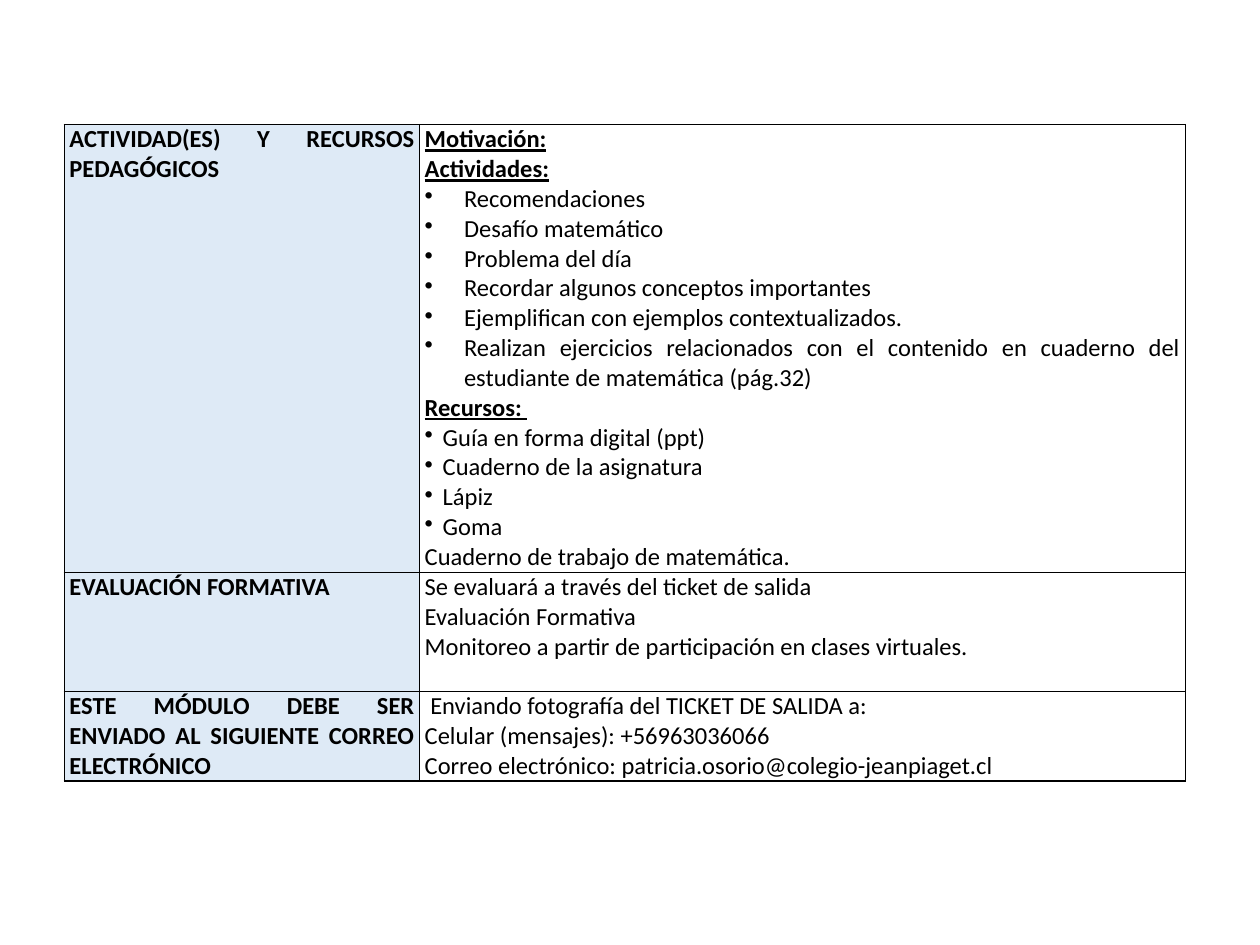
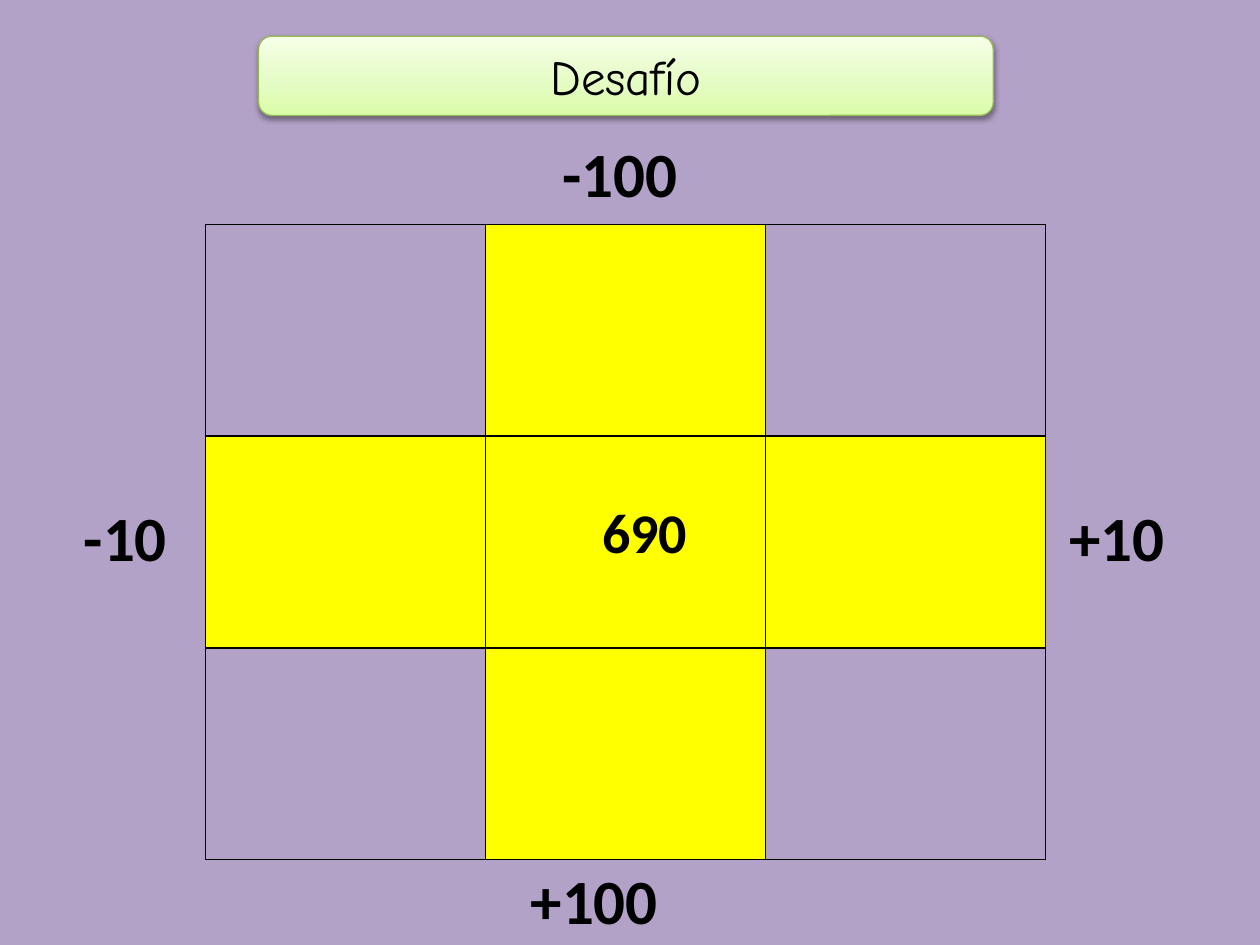
from lxml.etree import SubElement
from pptx import Presentation
from pptx.dml.color import RGBColor
from pptx.enum.shapes import MSO_SHAPE as Shape
from pptx.enum.text import MSO_ANCHOR as Anchor, MSO_AUTO_SIZE as AutoSize, PP_ALIGN as Align
from pptx.oxml import parse_xml
from pptx.oxml.ns import nsdecls, qn
from pptx.util import Pt

BLACK = RGBColor(0x00, 0x00, 0x00)
WHITE = RGBColor(0xFF, 0xFF, 0xFF)
LABEL_BLUE = RGBColor(0xDE, 0xEA, 0xF6)
LILAC = RGBColor(0xB3, 0xA2, 0xC7)
YELLOW = RGBColor(0xFF, 0xFF, 0x00)
BANNER_EDGE = RGBColor(0x98, 0xB9, 0x55)
BANNER_STOPS = [
    (0, RGBColor(0xDA, 0xFD, 0xA7)),
    (35, RGBColor(0xE4, 0xFC, 0xC2)),
    (100, RGBColor(0xF5, 0xFF, 0xE7)),
]
BODY_FONT = "Calibri"
TITLE_FONT = "Comic Neue"

PLAIN, HEADING, BULLET, SHORT_BULLET, INDENTED = range(5)
INDENTS = {BULLET: (22.5, -22.5), SHORT_BULLET: (10.3, -10.3), INDENTED: (3.2, 0)}

ACTIVITIES = [
    (HEADING, "Motivación:"),
    (HEADING, "Actividades:"),
    (BULLET, "Recomendaciones"),
    (BULLET, "Desafío matemático"),
    (BULLET, "Problema del día"),
    (BULLET, "Recordar algunos conceptos importantes"),
    (BULLET, "Ejemplifican con ejemplos contextualizados."),
    (BULLET, "Realizan ejercicios relacionados con el contenido en cuaderno "
             "del estudiante de matemática (pág.32)"),
    (HEADING, "Recursos: "),
    (SHORT_BULLET, "Guía en forma digital (ppt)"),
    (SHORT_BULLET, "Cuaderno de la asignatura"),
    (SHORT_BULLET, "Lápiz"),
    (SHORT_BULLET, "Goma"),
    (PLAIN, "Cuaderno de trabajo de matemática."),
]
EVALUATION = [
    (PLAIN, "Se evaluará a través del ticket de salida"),
    (PLAIN, "Evaluación Formativa"),
    (PLAIN, "Monitoreo a partir de participación en clases virtuales."),
]
DELIVERY = [
    (INDENTED, "Enviando fotografía del TICKET DE SALIDA a:"),
    (PLAIN, "Celular (mensajes): +56963036066"),
    (PLAIN, "Correo electrónico: patricia.osorio@colegio-jeanpiaget.cl"),
]
PLAN = [
    (256, "ACTIVIDAD(ES) Y RECURSOS PEDAGÓGICOS", ACTIVITIES),
    (68, "EVALUACIÓN FORMATIVA", EVALUATION),
    (51, "ESTE MÓDULO DEBE SER ENVIADO AL SIGUIENTE CORREO ELECTRÓNICO", DELIVERY),
]
STEPS = [
    ("+10", 604, 281.5, 91, 36, 0),
    ("-10", 0, 281.5, 111, 36, 40.7),
    ("+100", 288, 489, 127, 36, 8.1),
    ("-100", 306, 73.4, 91, 36, 8.1),
    ("690", 337, 280.8, 117, 32, 0),
]


def set_background(slide, color):
    slide.background.fill.solid()
    slide.background.fill.fore_color.rgb = color


def set_font(paragraph, size, bold=False, underline=False, name=BODY_FONT):
    font = paragraph.font
    font.name, font.size, font.bold, font.underline = name, Pt(size), bold, underline
    font.color.rgb = BLACK


def style_cell(cell, fill_color=None):
    properties = cell._tc.get_or_add_tcPr()
    for side in ("lnL", "lnR", "lnT", "lnB"):
        properties.append(parse_xml(
            f'<a:{side} {nsdecls("a")} w="12700"><a:solidFill>'
            f'<a:srgbClr val="{BLACK}"/></a:solidFill></a:{side}>'))
    if fill_color is None:
        cell.fill.background()
    else:
        cell.fill.solid()
        cell.fill.fore_color.rgb = fill_color


def write_cell(cell, lines, bold=False):
    cell.margin_left = cell.margin_right = Pt(2.9)
    cell.margin_top = cell.margin_bottom = 0
    frame = cell.text_frame
    for position, (kind, text) in enumerate(lines):
        paragraph = frame.add_paragraph() if position else frame.paragraphs[0]
        paragraph.text = text
        paragraph.alignment = Align.JUSTIFY
        if kind in INDENTS:
            margin, hanging = INDENTS[kind]
            properties = paragraph._p.get_or_add_pPr()
            properties.set("marL", str(Pt(margin)))
            properties.set("indent", str(Pt(hanging)))
            if hanging:
                SubElement(properties, qn("a:buChar")).set("char", "•")
        set_font(paragraph, 14, bold or kind == HEADING, kind == HEADING)


def add_grid(slide, left, top, widths, heights):
    table = slide.shapes.add_table(
        len(heights), len(widths), Pt(left), Pt(top),
        Pt(sum(widths)), Pt(sum(heights))).table
    table.first_row = table.horz_banding = False
    for column, width in zip(table.columns, widths):
        column.width = Pt(width)
    for row, height in zip(table.rows, heights):
        row.height = Pt(height)
    return table


def add_banner_title(slide, text, left, top, width, height):
    box = Pt(left), Pt(top), Pt(width), Pt(height)
    banner = slide.shapes.add_shape(Shape.ROUNDED_RECTANGLE, *box)
    banner.line.color.rgb = BANNER_EDGE
    banner.line.width = Pt(0.75)
    stops = "".join(
        f'<a:gs pos="{position * 1000}"><a:srgbClr val="{color}"/></a:gs>'
        for position, color in BANNER_STOPS)
    properties = banner.element.spPr
    properties.find(qn("a:prstGeom")).addnext(parse_xml(
        f'<a:gradFill {nsdecls("a")} rotWithShape="1"><a:gsLst>{stops}</a:gsLst>'
        '<a:lin ang="16200000" scaled="0"/></a:gradFill>'))
    banner.shadow.inherit = False
    properties.find(qn("a:effectLst")).append(parse_xml(
        f'<a:outerShdw {nsdecls("a")} blurRad="{Pt(3.1)}" dist="{Pt(1.6)}" '
        f'dir="5400000" rotWithShape="0"><a:srgbClr val="{BLACK}">'
        '<a:alpha val="38000"/></a:srgbClr></a:outerShdw>'))

    title = slide.shapes.title
    title.left, title.top, title.width, title.height = box
    banner.element.addnext(title.element)
    frame = title.text_frame
    frame.text = text
    frame.auto_size = AutoSize.NONE
    frame.vertical_anchor = Anchor.MIDDLE
    frame.paragraphs[0].alignment = Align.CENTER
    set_font(frame.paragraphs[0], 28, name=TITLE_FONT)


def add_number(slide, text, left, top, width, size, indent):
    frame = slide.shapes.add_textbox(
        Pt(left), Pt(top), Pt(width), Pt(size * 1.22 + 7.2)).text_frame
    frame.word_wrap = True
    frame.auto_size = AutoSize.SHAPE_TO_FIT_TEXT
    frame.margin_left = Pt(7.2 + indent)
    frame.text = text
    set_font(frame.paragraphs[0], size, bold=True)


def build_plan_slide(deck):
    slide = deck.slides.add_slide(deck.slide_layouts[6])
    set_background(slide, WHITE)
    table = add_grid(slide, 36.8, 71.2, [203, 437.8], [row[0] for row in PLAN])
    for index, (_, label, details) in enumerate(PLAN):
        label_cell, detail_cell = table.cell(index, 0), table.cell(index, 1)
        style_cell(label_cell, LABEL_BLUE)
        write_cell(label_cell, [(PLAIN, label)], bold=True)
        style_cell(detail_cell)
        write_cell(detail_cell, details)


def build_challenge_slide(deck):
    slide = deck.slides.add_slide(deck.slide_layouts[5])
    set_background(slide, LILAC)
    add_banner_title(slide, "Desafío", 147.8, 20.7, 419.8, 45.3)
    cross = add_grid(slide, 117.4, 128.2, [160] * 3, [121] * 3)
    for row in range(3):
        for column in range(3):
            style_cell(cross.cell(row, column), YELLOW if 1 in (row, column) else None)
    for step in STEPS:
        add_number(slide, *step)


def main():
    deck = Presentation()
    deck.slide_width, deck.slide_height = Pt(720), Pt(540)
    build_plan_slide(deck)
    build_challenge_slide(deck)
    deck.save("out.pptx")


if __name__ == "__main__":
    main()
